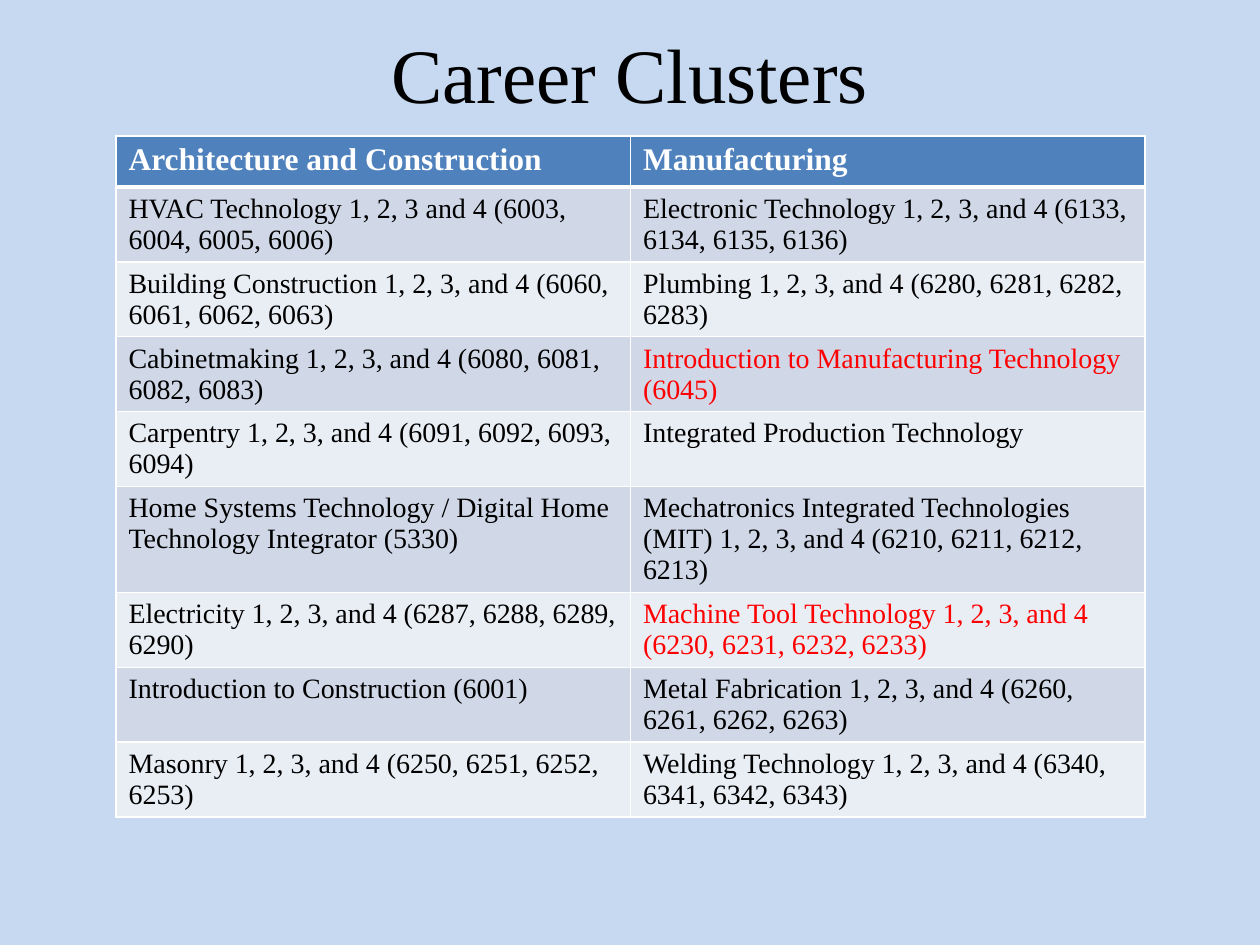
from dataclasses import dataclass

from lxml.etree import SubElement
from pptx import Presentation
from pptx.dml.color import RGBColor as RGB
from pptx.enum.text import MSO_ANCHOR as Anchor, PP_ALIGN as Align
from pptx.oxml.ns import qn
from pptx.util import Emu, Pt


@dataclass(frozen=True)
class Theme:
    face: str = "Times New Roman"
    back: str = "C6D9F1"
    ink: str = "000000"
    alert: str = "FF0000"
    white: str = "FFFFFF"
    head: str = "4F81BD"
    bands: tuple = ("D0D8E8", "E9EDF4")
    title: int = 44
    label: int = 18
    body: int = 16
    thin: int = 1
    thick: int = 3


THEME = Theme()
SCALE = 914400 / 126

HEADS = ("Architecture and Construction", "Manufacturing")
COURSES = [
    ("HVAC Technology 1, 2, 3 and 4 (6003, 6004, 6005, 6006)",
     "Electronic Technology 1, 2, 3, and 4 (6133, 6134, 6135, 6136)"),
    ("Building Construction 1, 2, 3, and 4 (6060, 6061, 6062, 6063)",
     "Plumbing 1, 2, 3, and 4 (6280, 6281, 6282, 6283)"),
    ("Cabinetmaking 1, 2, 3, and 4 (6080, 6081, 6082, 6083)",
     "Introduction to Manufacturing Technology\n(6045)"),
    ("Carpentry 1, 2, 3, and 4 (6091, 6092, 6093, 6094)",
     "Integrated Production Technology"),
    ("Home Systems Technology / Digital Home Technology Integrator (5330)",
     "Mechatronics Integrated Technologies (MIT) 1, 2, 3, and 4 "
     "(6210, 6211, 6212, 6213)"),
    ("Electricity 1, 2, 3, and 4 (6287, 6288, 6289, 6290)",
     "Machine Tool Technology 1, 2, 3, and 4 (6230, 6231, 6232, 6233)"),
    ("Introduction to Construction (6001)",
     "Metal Fabrication 1, 2, 3, and 4 (6260, 6261, 6262, 6263)"),
    ("Masonry 1, 2, 3, and 4 (6250, 6251, 6252, 6253)",
     "Welding Technology 1, 2, 3, and 4 (6340, 6341, 6342, 6343)"),
]
ALERTS = {(3, 1), (6, 1)}  # (row, column) of the courses in red


def px(count):
    return Emu(round(count * SCALE))


def style(frame, size, color, bold=False):
    for para in frame.paragraphs:
        font = para.font
        font.name, font.size, font.bold = THEME.face, Pt(size), bold
        font.color.rgb = RGB.from_string(color)


def edge(cell, side, width):
    line = SubElement(cell._tc.get_or_add_tcPr(), qn(f"a:ln{side}"),
                      w=str(Pt(width)))
    fill = SubElement(line, qn("a:solidFill"))
    SubElement(fill, qn("a:srgbClr"), val=THEME.white)


def add_title(slide, box):
    title = slide.shapes.title
    title.left, title.top, title.width, title.height = map(px, box)
    frame = title.text_frame
    frame.text = "Career Clusters"
    frame.margin_top = 0
    frame.vertical_anchor = Anchor.TOP
    frame.paragraphs[0].alignment = Align.CENTER
    style(frame, THEME.title, THEME.ink)


def fill_cell(cell, text, row, col):
    # Edges come before the fill, as the schema asks.
    for side in "LRTB":
        rule = (row, side) in {(0, "B"), (1, "T")}
        edge(cell, side, THEME.thick if rule else THEME.thin)
    cell.text = text
    cell.fill.solid()
    if row == 0:
        tint = THEME.head
        style(cell.text_frame, THEME.label, THEME.white, True)
    else:
        tint = THEME.bands[(row - 1) % 2]
        color = THEME.alert if (row, col) in ALERTS else THEME.ink
        style(cell.text_frame, THEME.body, color)
    cell.fill.fore_color.rgb = RGB.from_string(tint)


def add_courses(slide, box, step):
    """Fill the table; rows start at height step and grow with their text."""
    rows = [HEADS, *COURSES]
    holder = slide.shapes.add_table(len(rows), len(HEADS), *map(px, box))
    table = holder.table
    for r, texts in enumerate(rows):
        table.rows[r].height = px(step)
        for c, text in enumerate(texts):
            fill_cell(table.cell(r, c), text, r, c)
    holder.height = px(box[3])


def main():
    deck = Presentation()
    deck.slide_width, deck.slide_height = px(1260), px(945)
    slide = deck.slides.add_slide(deck.slide_layouts[5])
    back = slide.background.fill
    back.solid()
    back.fore_color.rgb = RGB.from_string(THEME.back)
    add_title(slide, (63, 27, 1134, 162))
    add_courses(slide, (116, 136, 1029, 723), 51)
    deck.save("out.pptx")


if __name__ == "__main__":
    main()
